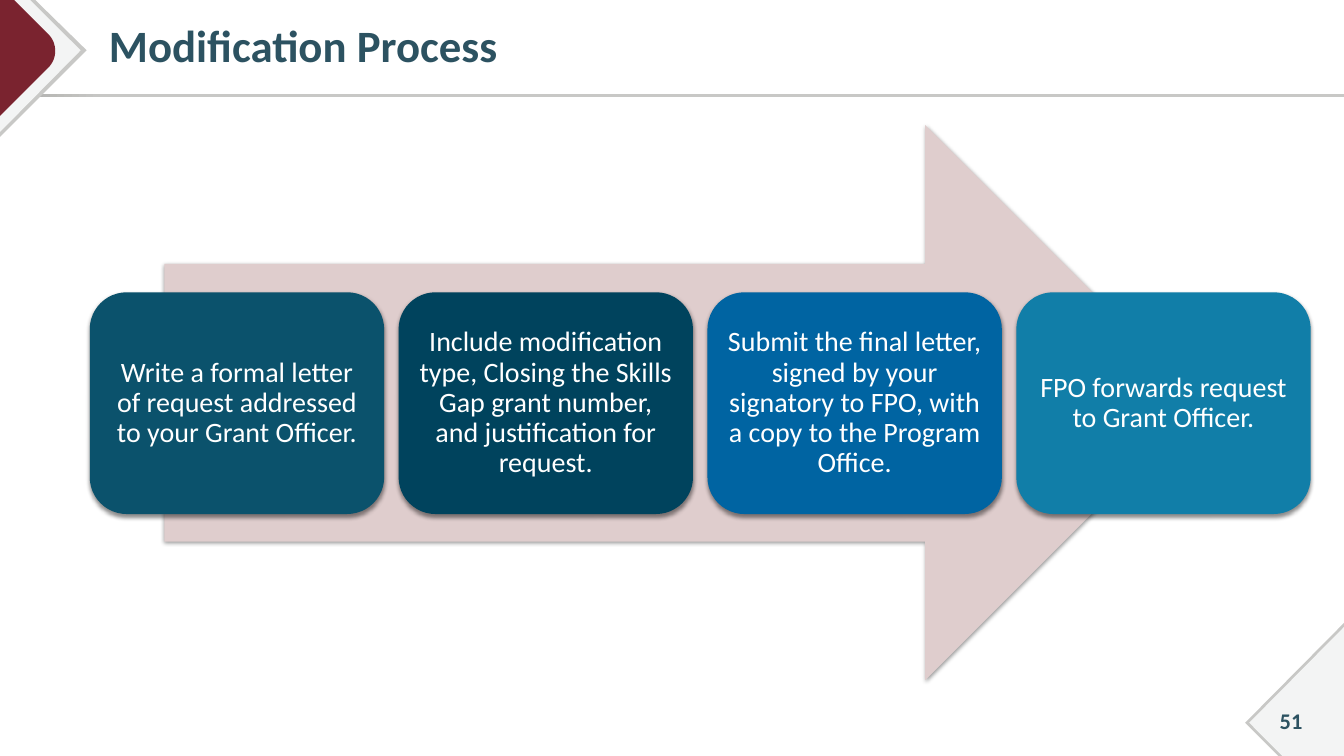
from dataclasses import dataclass

from lxml import etree
from pptx import Presentation
from pptx.dml.color import RGBColor
from pptx.enum import shapes, text
from pptx.util import Inches, Pt


@dataclass(frozen=True)
class Theme:
    font: str = "Calibri"
    heading: str = "2C5261"
    white: str = "FFFFFF"
    edge: str = "C8C8C6"
    edge_dark: str = "ABABA8"
    pale: str = "F3F4F4"
    maroon: str = "7A232F"
    arrow: str = "DFCDCD"
    steps: tuple = ("0B526C", "00435D", "0064A2", "117EA8")
    title_size: int = 32
    step_size: int = 20
    number_size: int = 16


theme = Theme()
DRAWING = "http://schemas.openxmlformats.org/drawingml/2006/main"


def paint(shape, color, shadow=None):
    """Fill a shape without outline; shadow is (opacity %, distance in points)."""
    shape.shadow.inherit = False
    shape.fill.solid()
    shape.fill.fore_color.rgb = RGBColor.from_string(color)
    shape.line.fill.background()
    if shadow:
        opacity, distance = shadow
        effects = shape._element.spPr.find(f"{{{DRAWING}}}effectLst")
        effects.append(etree.fromstring(
            f'<a:outerShdw xmlns:a="{DRAWING}" blurRad="{Pt(3)}" dist="{Pt(distance)}" '
            f'dir="5400000" rotWithShape="0"><a:srgbClr val="000000">'
            f'<a:alpha val="{opacity * 1000}"/></a:srgbClr></a:outerShdw>'))


def write(shape, wording, size, color, bold=False, align=text.PP_ALIGN.CENTER,
          spacing=0.9, insets=(0.1, 0.05, 0.1, 0.05)):
    frame = shape.text_frame
    frame.text = wording
    left, top, right, bottom = map(Inches, insets)
    frame_format = {"word_wrap": True, "auto_size": text.MSO_AUTO_SIZE.NONE,
                    "vertical_anchor": text.MSO_ANCHOR.MIDDLE,
                    "margin_left": left, "margin_top": top,
                    "margin_right": right, "margin_bottom": bottom}
    for name, value in frame_format.items():
        setattr(frame, name, value)
    paragraph = frame.paragraphs[0]
    paragraph.alignment = align
    paragraph.line_spacing = spacing
    font = paragraph.runs[0].font
    for name, value in {"name": theme.font, "size": Pt(size), "bold": bold}.items():
        setattr(font, name, value)
    font.color.rgb = RGBColor.from_string(color)


presentation = Presentation()
presentation.slide_width = Inches(13.33)
presentation.slide_height = Inches(7.5)
slide = presentation.slides.add_slide(presentation.slide_layouts[5])

# Rule under the title
rule = slide.shapes.add_shape(shapes.MSO_SHAPE.RECTANGLE, Inches(0), Inches(0.93),
                              Inches(13.33), Inches(0.03))
paint(rule, theme.edge)
rule.fill.gradient()
rule.fill.gradient_angle = 0
for stop, (position, color) in zip(rule.fill.gradient_stops,
                                   [(0, theme.edge_dark), (0.08, theme.edge)]):
    stop.position = position
    stop.color.rgb = RGBColor.from_string(color)

# Corner diamonds; the maroon one has a rounded tip along a cubic curve
tip = [(0.48, 0.34), (0.57, 0.43), (0.57, 0.58), (0.48, 0.67)]
curve = []
for step in range(17):
    t = step / 16
    weights = [(1 - t) ** 3, 3 * t * (1 - t) ** 2, 3 * t ** 2 * (1 - t), t ** 3]
    curve.append(tuple(sum(w * point[axis] for w, point in zip(weights, tip))
                       for axis in (0, 1)))
corners = [
    (theme.edge, [(0, 0), (0.35, 0), (0.86, 0.5), (0, 1.36)]),
    (theme.pale, [(0, 0), (0.3, 0), (0.8, 0.5), (0, 1.31)]),
    (theme.maroon, [(0, 0), (0.14, 0), *curve, (0, 1.15)]),
    (theme.edge, [(13.33, 6.18), (13.33, 7.5), (12.68, 7.5), (12.35, 7.17)]),
    (theme.pale, [(13.33, 6.22), (13.33, 7.5), (12.72, 7.5), (12.39, 7.17)]),
]
for color, outline in corners:
    points = [(Inches(x), Inches(y)) for x, y in outline]
    builder = slide.shapes.build_freeform(*points[0])
    builder.add_line_segments(points[1:], close=True)
    paint(builder.convert_to_shape(), color)

# Title and slide number
title = slide.shapes.title
title.left, title.top, title.width, title.height = map(Inches, (0.88, 0.05, 12.12, 0.86))
write(title, "Modification Process", theme.title_size, theme.heading, bold=True,
      align=text.PP_ALIGN.LEFT, insets=(0.2, 0.05, 0.1, 0.05))
number = slide.shapes.add_textbox(*map(Inches, (12.45, 6.95, 0.71, 0.4)))
write(number, "51", theme.number_size, theme.heading, bold=True, spacing=1)

# Process arrow with its steps
arrow = slide.shapes.add_shape(shapes.MSO_SHAPE.RIGHT_ARROW,
                               *map(Inches, (1.63, 1.24, 10.3, 5.51)))
paint(arrow, theme.arrow, shadow=(40, 1.4))

steps = [
    "Write a formal letter of request addressed to your Grant Officer.",
    "Include modification type, Closing the Skills Gap grant number, "
    "and justification for request.",
    "Submit the final letter, signed by your signatory to FPO, "
    "with a copy to the Program Office.",
    "FPO forwards request to Grant Officer.",
]
first_left, last_right, step_width = 0.89, 13, 2.92
pitch = (last_right - first_left - step_width) / (len(steps) - 1)
for index, (wording, color) in enumerate(zip(steps, theme.steps)):
    box = slide.shapes.add_shape(shapes.MSO_SHAPE.ROUNDED_RECTANGLE,
                                 Inches(first_left + index * pitch), Inches(2.9),
                                 Inches(step_width), Inches(2.2))
    paint(box, color, shadow=(45, 2))
    write(box, wording, theme.step_size, theme.white, insets=(0.08,) * 4)

presentation.save("out.pptx")
